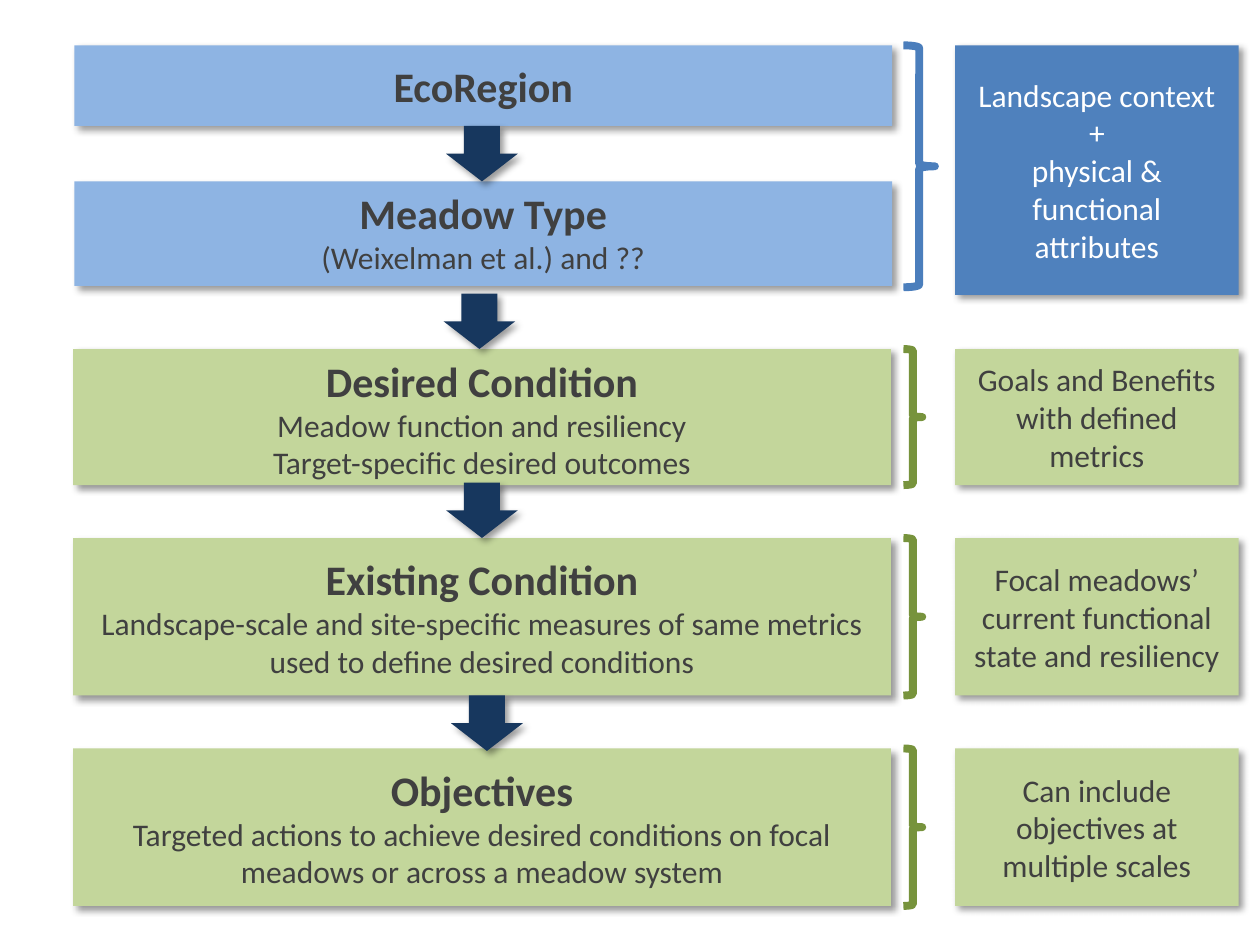
"""Build the meadow planning flow slide, from ecoregion to objectives."""
from dataclasses import dataclass

from lxml import etree
from pptx import Presentation, util as u
from pptx.dml.color import RGBColor
from pptx.enum import shapes, text
from pptx.oxml.ns import qn


@dataclass(frozen=True)
class Theme:
    font: str = "Calibri"
    head: int = 24
    body: int = 18
    rule: float = 4.5
    dark: str = "404040"
    white: str = "FFFFFF"
    sky: str = "8EB4E3"
    blue: str = "4F81BD"
    edge: str = "4B7EBC"
    lime: str = "C3D69B"
    moss: str = "77933C"
    navy: str = "17375E"


T = Theme()
PX = 9144
MID, TOP = text.MSO_ANCHOR.MIDDLE, text.MSO_ANCHOR.TOP

STEPS = [
    (59, 36, 64, T.sky, MID, "EcoRegion", []),
    (59, 144, 83, T.sky, TOP, "Meadow Type", ["(Weixelman et al.) and ??"]),
    (58, 277, 108, T.lime, TOP, "Desired Condition",
     ["Meadow function and resiliency", "Target-specific desired outcomes"]),
    (58, 427, 125, T.lime, MID, "Existing Condition",
     ["Landscape-scale and site-specific measures of same metrics "
      "used to define desired conditions"]),
    (58, 594, 125, T.lime, MID, "Objectives",
     ["Targeted actions to achieve desired conditions on focal meadows "
      "or across a meadow system"]),
]
ARROWS = [(354, 100), (352, 233), (354, 383), (358, 552)]
NOTES = [
    (36, 198, 25, 192, T.blue, T.edge, T.white,
     ["Landscape context +", "physical & functional attributes"]),
    (277, 108, 15, 108, T.lime, T.moss, T.dark,
     ["Goals and Benefits", "with defined metrics"]),
    (427, 125, 15, 125, T.lime, T.moss, T.dark,
     ["Focal meadows’ current functional state and resiliency"]),
    (594, 125, 15, 125, T.lime, T.moss, T.dark,
     ["Can include objectives at multiple scales"]),
]
STEP_W, ARROW_W, ARROW_H = 649, 57, 44
BRACE_X, NOTE_X, NOTE_W = 717, 758, 225


def place(slide, kind, *box):
    shape = slide.shapes.add_shape(kind, *(n * PX for n in box))
    shape.shadow.inherit = False
    return shape


def solid(slide, kind, box, fill):
    shape = place(slide, kind, *box)
    shape.fill.solid()
    shape.fill.fore_color.rgb = RGBColor.from_string(fill)
    shape.line.fill.background()
    effects = shape._element.spPr.find(qn("a:effectLst"))
    shade = etree.SubElement(
        effects, qn("a:outerShdw"), blurRad=str(u.Pt(4)), dist=str(u.Pt(3)),
        dir=str(45 * 60000), algn="tl", rotWithShape="0")
    tint = etree.SubElement(shade, qn("a:srgbClr"), val="000000")
    etree.SubElement(tint, qn("a:alpha"), val="40000")
    return shape


def write(shape, lines, color, anchor=MID):
    frame = shape.text_frame
    frame.word_wrap = True
    frame.vertical_anchor = anchor
    for i, (words, size, bold) in enumerate(lines):
        para = frame.add_paragraph() if i else frame.paragraphs[0]
        para.alignment = text.PP_ALIGN.CENTER
        run = para.add_run()
        run.text = words
        font = run.font
        font.name, font.size, font.bold = T.font, u.Pt(size), bold
        font.color.rgb = RGBColor.from_string(color)


def brace(slide, box, color):
    shape = place(slide, shapes.MSO_SHAPE.RIGHT_BRACE, *box)
    shape.fill.background()
    shape.line.color.rgb = RGBColor.from_string(color)
    shape.line.width = u.Pt(T.rule)


def plain(lines):
    return [(line, T.body, False) for line in lines]


def main():
    deck = Presentation()
    deck.slide_width, deck.slide_height = 1000 * PX, 750 * PX
    slide = deck.slides.add_slide(deck.slide_layouts[6])
    rect = shapes.MSO_SHAPE.RECTANGLE
    for x, y, h, fill, anchor, head, lines in STEPS:
        step = solid(slide, rect, (x, y, STEP_W, h), fill)
        write(step, [(head, T.head, True)] + plain(lines), T.dark, anchor)
    for x, y in ARROWS:
        solid(slide, shapes.MSO_SHAPE.DOWN_ARROW,
              (x, y, ARROW_W, ARROW_H), T.navy)
    for y, h, wide, tall, fill, edge, ink, lines in NOTES:
        brace(slide, (BRACE_X, y, wide, tall), edge)
        note = solid(slide, rect, (NOTE_X, y, NOTE_W, h), fill)
        write(note, plain(lines), ink)
    deck.save("out.pptx")


if __name__ == "__main__":
    main()
